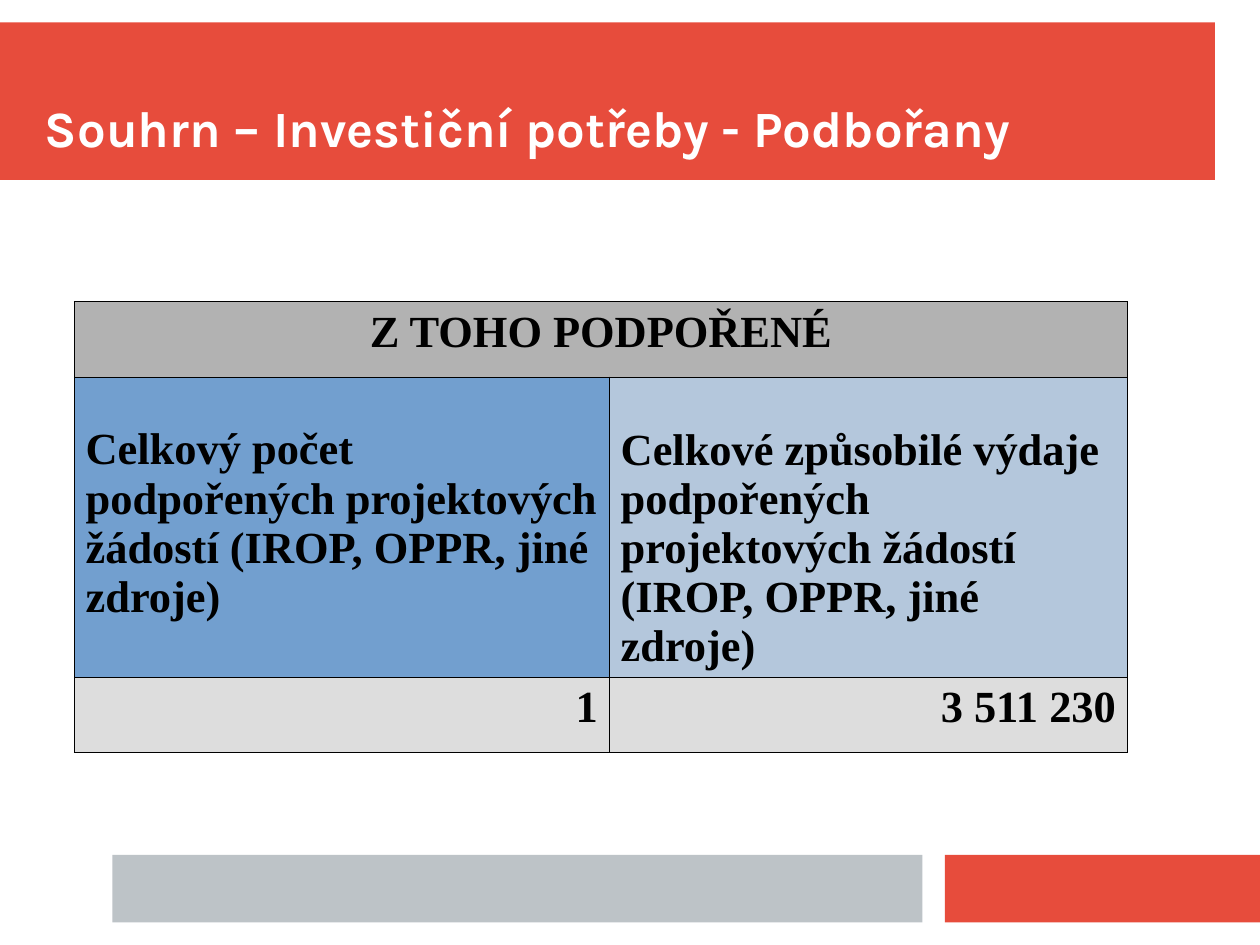
from dataclasses import dataclass

from lxml import etree
from pptx import Presentation
from pptx import util as u
from pptx.dml.color import RGBColor
from pptx.enum import shapes, text
from pptx.oxml import ns

PX = 3600  # 100 px to the centimetre


@dataclass(frozen=True)
class Theme:
    red: str = "E74C3C"
    silver: str = "BDC3C7"
    white: str = "FFFFFF"
    black: str = "000000"
    header: str = "B2B2B2"
    count: str = "729FCF"
    cost: str = "B4C7DC"
    value: str = "DDDDDD"
    title_font: str = "Karla"
    table_font: str = "Times New Roman"
    title_size: int = 32
    table_size: int = 28
    border: float = 0.75


@dataclass(frozen=True)
class Band:
    left: int
    top: int
    width: int
    height: int
    color: str


@dataclass(frozen=True)
class Entry:
    row: int
    column: int
    lines: tuple[str, ...]
    fill: str
    align: text.PP_ALIGN = text.PP_ALIGN.LEFT
    anchor: text.MSO_ANCHOR = text.MSO_ANCHOR.TOP
    top_margin: int = 13


THEME = Theme()
BANDS = (
    Band(0, 50, 2700, 350, THEME.red),
    Band(2100, 1900, 700, 150, THEME.red),
    Band(250, 1900, 1800, 150, THEME.silver),
)
COLUMNS = (1189, 1151)
ROWS = (167, 667, 167)
ENTRIES = (
    Entry(0, 0, ("Z TOHO PODPOŘENÉ",), THEME.header, text.PP_ALIGN.CENTER),
    Entry(1, 0, ("Celkový počet podpořených projektových žádostí (IROP, OPPR, jiné zdroje)",),
          THEME.count, top_margin=107),
    Entry(1, 1, ("Celkové způsobilé výdaje podpořených projektových žádostí",
                 "(IROP, OPPR, jiné zdroje)"),
          THEME.cost, anchor=text.MSO_ANCHOR.BOTTOM),
    Entry(2, 0, ("1",), THEME.value, text.PP_ALIGN.RIGHT),
    Entry(2, 1, ("3 511 230",), THEME.value, text.PP_ALIGN.RIGHT),
)


def px(length: int) -> u.Emu:
    return u.Emu(length * PX)


def rgb(color: str) -> RGBColor:
    return RGBColor.from_string(color)


def write(frame, lines: tuple[str, ...], *, font: str, size: int, color: str,
          align: text.PP_ALIGN = text.PP_ALIGN.LEFT) -> None:
    """Fill a text frame with one bold paragraph per line."""
    frame.word_wrap = True
    for index, line in enumerate(lines):
        paragraph = frame.add_paragraph() if index else frame.paragraphs[0]
        paragraph.alignment = align
        run = paragraph.add_run()
        run.text = line
        run.font.name = font
        run.font.size = u.Pt(size)
        run.font.bold = True
        run.font.color.rgb = rgb(color)


def draw_band(slide, band: Band) -> None:
    shape = slide.shapes.add_shape(
        shapes.MSO_SHAPE.RECTANGLE,
        px(band.left), px(band.top), px(band.width), px(band.height))
    shape.shadow.inherit = False
    shape.fill.solid()
    shape.fill.fore_color.rgb = rgb(band.color)
    shape.line.fill.background()


def draw_title(slide, wording: str) -> None:
    frame = slide.shapes.add_textbox(px(100), px(100), px(2600), px(250)).text_frame
    frame.margin_left = frame.margin_right = frame.margin_top = frame.margin_bottom = 0
    frame.vertical_anchor = text.MSO_ANCHOR.BOTTOM
    write(frame, (wording,), font=THEME.title_font, size=THEME.title_size, color=THEME.white)


def add_borders(cell) -> None:
    properties = cell._tc.get_or_add_tcPr()
    for index, side in enumerate(("a:lnL", "a:lnR", "a:lnT", "a:lnB")):
        edge = etree.Element(ns.qn(side), w=str(u.Pt(THEME.border)))
        fill = etree.SubElement(edge, ns.qn("a:solidFill"))
        etree.SubElement(fill, ns.qn("a:srgbClr"), val=THEME.black)
        properties.insert(index, edge)


def draw_table(slide) -> None:
    table = slide.shapes.add_table(
        len(ROWS), len(COLUMNS), px(165), px(671), px(sum(COLUMNS)), px(sum(ROWS))).table
    table.first_row = table.horz_banding = False
    for column, width in zip(table.columns, COLUMNS):
        column.width = px(width)
    for row, height in zip(table.rows, ROWS):
        row.height = px(height)
    table.cell(0, 0).merge(table.cell(0, len(COLUMNS) - 1))
    for entry in ENTRIES:
        cell = table.cell(entry.row, entry.column)
        cell.fill.solid()
        cell.fill.fore_color.rgb = rgb(entry.fill)
        cell.margin_top = px(entry.top_margin)
        cell.vertical_anchor = entry.anchor
        write(cell.text_frame, entry.lines, font=THEME.table_font,
              size=THEME.table_size, color=THEME.black, align=entry.align)
    for cell in table.iter_cells():
        add_borders(cell)


def main() -> None:
    deck = Presentation()
    deck.slide_width, deck.slide_height = px(2800), px(2100)
    slide = deck.slides.add_slide(deck.slide_layouts[6])
    for band in BANDS:
        draw_band(slide, band)
    draw_title(slide, "Souhrn – Investiční potřeby - Podbořany")
    draw_table(slide)
    deck.save("out.pptx")


if __name__ == "__main__":
    main()
